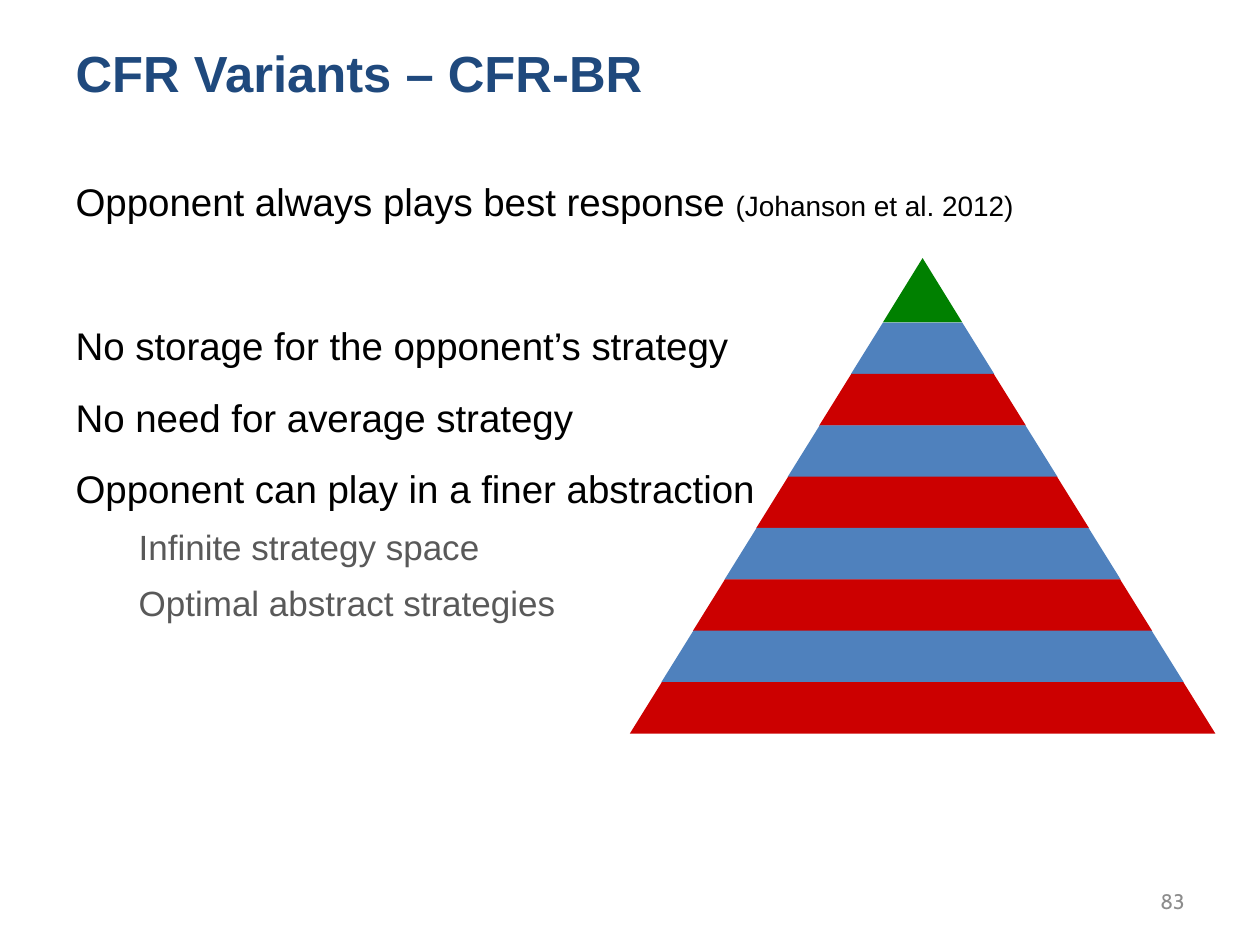
import pptx
import pptx.util
import pptx.dml.color
import pptx.enum.shapes
import pptx.enum.text
from lxml import etree

Pt = pptx.util.Pt
Shape = pptx.enum.shapes.MSO_SHAPE
Align = pptx.enum.text.PP_ALIGN
Anchor = pptx.enum.text.MSO_ANCHOR
DRAWING = "{http://schemas.openxmlformats.org/drawingml/2006/main}"


def color(hex_value):
    return pptx.dml.color.RGBColor.from_string(hex_value)


def add_text(paragraph, text, size, fill, font="Arial", bold=False):
    run = paragraph.add_run()
    run.text = text
    run.font.size = Pt(size)
    run.font.name = font
    run.font.bold = bold
    run.font.color.rgb = color(fill)


class Deck:
    TITLE, BODY, DETAIL, NUMBER = "1F497D", "000000", "595959", "8C8C8C"
    TOP, BLUE, RED = "008000", "4F81BD", "CC0000"

    def __init__(self):
        self.presentation = pptx.Presentation()
        self.presentation.slide_width = Pt(720)
        self.presentation.slide_height = Pt(540)
        self.slide = self.presentation.slides.add_slide(self.presentation.slide_layouts[1])

    def place(self, holder, left, top, width, height, anchor):
        holder.left, holder.top = Pt(left), Pt(top)
        holder.width, holder.height = Pt(width), Pt(height)
        frame = holder.text_frame
        frame.word_wrap = True
        frame.auto_size = pptx.enum.text.MSO_AUTO_SIZE.NONE
        frame.vertical_anchor = anchor
        return frame

    def title(self, text):
        frame = self.place(self.slide.shapes.title, 36, 18.7, 613.4, 45.4, Anchor.MIDDLE)
        heading = frame.paragraphs[0]
        heading.alignment = Align.LEFT
        add_text(heading, text, 29, self.TITLE, bold=True)

    def body(self, points):
        frame = self.place(self.slide.placeholders[1], 36, 82.8, 648, 399.6, Anchor.TOP)
        frame.margin_top = Pt(19.5)
        for index, (level, gap, runs) in enumerate(points):
            point = frame.paragraphs[0] if index == 0 else frame.add_paragraph()
            point.level = level
            properties = point._p.get_or_add_pPr()
            properties.set("marL", str(Pt(36 * level)))
            properties.set("indent", "0")
            etree.SubElement(properties, DRAWING + "buNone")
            point.line_spacing = Pt(24 if level else 26)
            point.space_before = Pt(gap)
            for text, size in runs:
                add_text(point, text, size, self.DETAIL if level else self.BODY)

    def page_number(self, number):
        box = self.slide.shapes.add_textbox(0, 0, 0, 0)
        frame = self.place(box, 516, 500.5, 168, 28.8, Anchor.MIDDLE)
        frame.paragraphs[0].alignment = Align.RIGHT
        add_text(frame.paragraphs[0], number, 12, self.NUMBER, font="Cabin")

    def tier(self, kind, center, top, width, height, fill):
        tier = self.slide.shapes.add_shape(
            kind, Pt(center - width / 2), Pt(top), Pt(width), Pt(height))
        tier.shadow.inherit = False
        tier.fill.solid()
        tier.fill.fore_color.rgb = color(fill)
        tier.line.fill.background()
        return tier

    def pyramid(self, center, top, tiers):
        peak_height, pitch, first_width, widening = 36.8, 29.35, 82, 36.1
        self.tier(Shape.ISOSCELES_TRIANGLE, center, top, 45.4, peak_height, self.TOP)
        for index in range(tiers):
            band = self.tier(
                Shape.TRAPEZOID, center, top + peak_height + pitch * index,
                first_width + widening * index, 29.5, self.RED if index % 2 else self.BLUE)
            band.adjustments[0] = 0.622


def main():
    deck = Deck()
    deck.title("CFR Variants – CFR-BR")
    deck.body([
        (0, 0, [("Opponent always plays best response ", 22), ("(Johanson et al. 2012)", 16)]),
        (0, 56, [("No storage for the opponent’s strategy", 22)]),
        (0, 15, [("No need for average strategy", 22)]),
        (0, 15, [("Opponent can play in a finer abstraction", 22)]),
        (1, 8, [("Infinite strategy space", 20)]),
        (1, 8, [("Optimal abstract strategies", 20)]),
    ])
    deck.page_number("83")
    deck.pyramid(center=527.2, top=147.5, tiers=8)
    deck.presentation.save("out.pptx")


if __name__ == "__main__":
    main()
